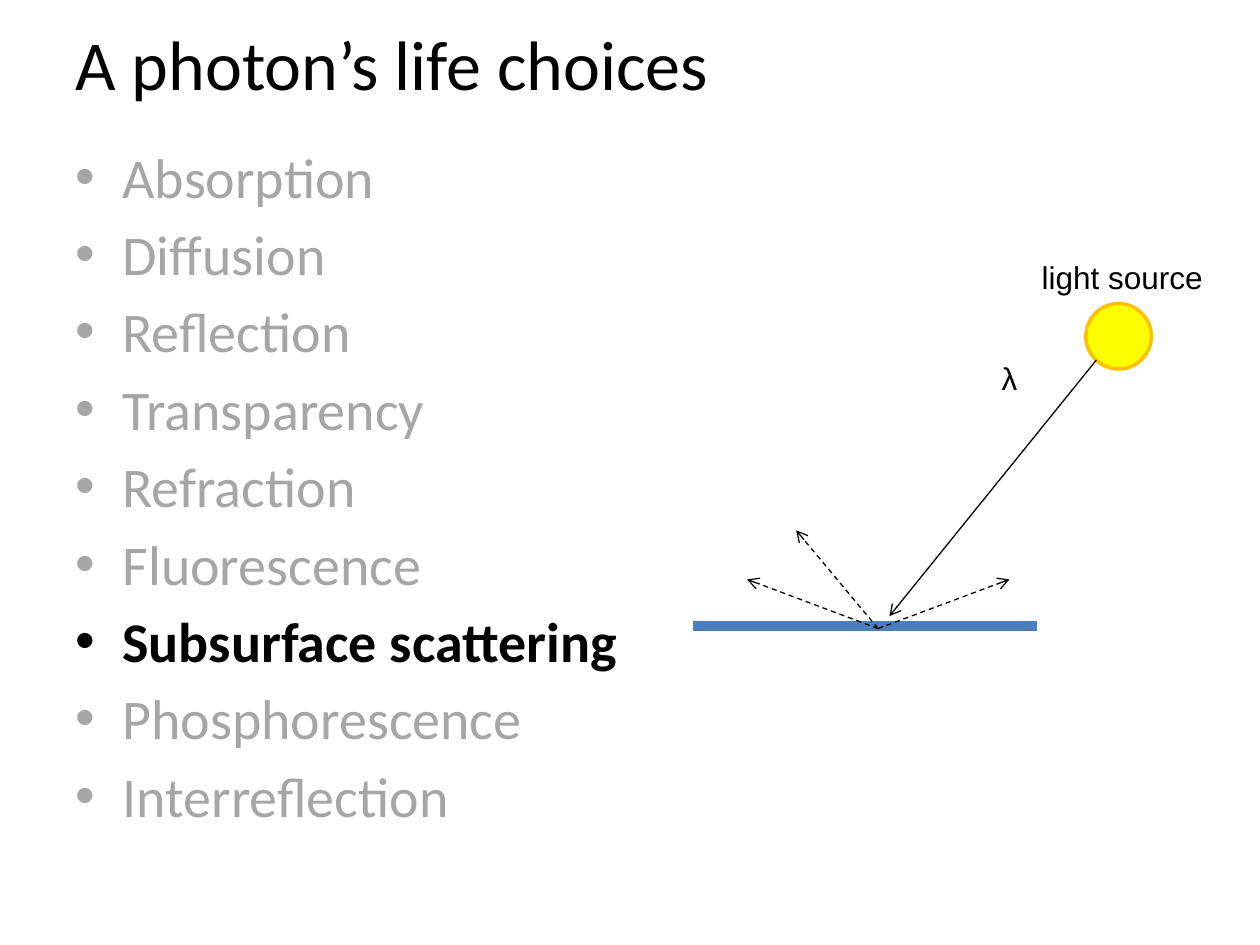
from lxml.etree import SubElement
from pptx import Presentation
from pptx.dml.color import RGBColor
from pptx.enum.dml import MSO_LINE
from pptx.enum.shapes import MSO_CONNECTOR, MSO_SHAPE
from pptx.enum.text import MSO_ANCHOR, PP_ALIGN
from pptx.oxml.ns import qn
from pptx.util import Cm, Pt

BLACK = RGBColor(0x00, 0x00, 0x00)
GREY = RGBColor(0xA6, 0xA6, 0xA6)
SURFACE_BLUE = RGBColor(0x4B, 0x7E, 0xBC)
SUN_YELLOW = RGBColor(0xFF, 0xFF, 0x00)
SUN_RIM = RGBColor(0xFF, 0xC0, 0x00)

# Content; all positions in cm
TITLE = "A photon’s life choices"
CHOICES = ["Absorption", "Diffusion", "Reflection", "Transparency", "Refraction",
           "Fluorescence", "Subsurface scattering", "Phosphorescence", "Interreflection"]
CURRENT = "Subsurface scattering"
LABELS = [("λ", (19.94, 7.11, 1.3, 1.6)),
          ("light source", (20.75, 5.08, 3.81, 1.07))]
SURFACE = ((13.97, 12.62), (20.9, 12.62))
SUN = (21.89, 6.12, 1.32, 1.32)
INCOMING = ((22.1, 7.26), (17.93, 12.42))
SCATTER_POINT = (17.7, 12.67)
SCATTER_ENDS = [(16.05, 10.69), (15.06, 11.68), (20.35, 11.68)]


def add_run(paragraph, text, size, font, color, bold=False):
    run = paragraph.add_run()
    run.text = text
    run.font.size = Pt(size)
    run.font.name = font
    run.font.bold = bold
    run.font.color.rgb = color


def add_text_frame(slide, box):
    frame = slide.shapes.add_textbox(*map(Cm, box)).text_frame
    frame.word_wrap = True
    return frame


def add_bullet(paragraph):
    properties = paragraph._p.get_or_add_pPr()
    properties.set("marL", str(Cm(0.95)))
    properties.set("indent", str(Cm(-0.95)))
    SubElement(properties, qn("a:buFont"), typeface="Arial")
    SubElement(properties, qn("a:buChar"), char="•")


def add_line(slide, start, end, color=BLACK, width=0.75, dashed=False, arrow=True):
    connector = slide.shapes.add_connector(
        MSO_CONNECTOR.STRAIGHT, *map(Cm, start + end))
    connector.line.color.rgb = color
    connector.line.width = Pt(width)
    if dashed:
        connector.line.dash_style = MSO_LINE.DASH
    if arrow:
        SubElement(connector.line._ln, qn("a:tailEnd"), type="arrow")
    SubElement(connector._element.spPr, qn("a:effectLst"))


def main():
    prs = Presentation()
    prs.slide_width, prs.slide_height = Cm(25.4), Cm(19.05)
    slide = prs.slides.add_slide(prs.slide_layouts[5])

    # Title
    title = slide.shapes.title
    title.left, title.top, title.width, title.height = map(Cm, (1.27, 0, 22.86, 2.54))
    title.text_frame.vertical_anchor = MSO_ANCHOR.MIDDLE
    heading = title.text_frame.paragraphs[0]
    heading.alignment = PP_ALIGN.LEFT
    add_run(heading, TITLE, 40, "Calibri", BLACK)

    # List of choices, the current one highlighted
    choices = add_text_frame(slide, (1.27, 2.74, 22.86, 14.27))
    for i, choice in enumerate(CHOICES):
        paragraph = choices.add_paragraph() if i else choices.paragraphs[0]
        paragraph.space_before = Pt(5.8)
        add_bullet(paragraph)
        current = choice == CURRENT
        add_run(paragraph, choice, 32, "Calibri", BLACK if current else GREY, current)

    # Surface, light source and incoming ray
    add_line(slide, *SURFACE, color=SURFACE_BLUE, width=6, arrow=False)
    sun = slide.shapes.add_shape(MSO_SHAPE.OVAL, *map(Cm, SUN))
    sun.shadow.inherit = False
    sun.fill.solid()
    sun.fill.fore_color.rgb = SUN_YELLOW
    sun.line.color.rgb = SUN_RIM
    sun.line.width = Pt(2)
    add_line(slide, *INCOMING)
    for text, box in LABELS:
        add_run(add_text_frame(slide, box).paragraphs[0], text, 18, "Arial", BLACK)

    # Scattered rays
    for end in SCATTER_ENDS:
        add_line(slide, SCATTER_POINT, end, dashed=True)

    prs.save("out.pptx")


if __name__ == "__main__":
    main()
